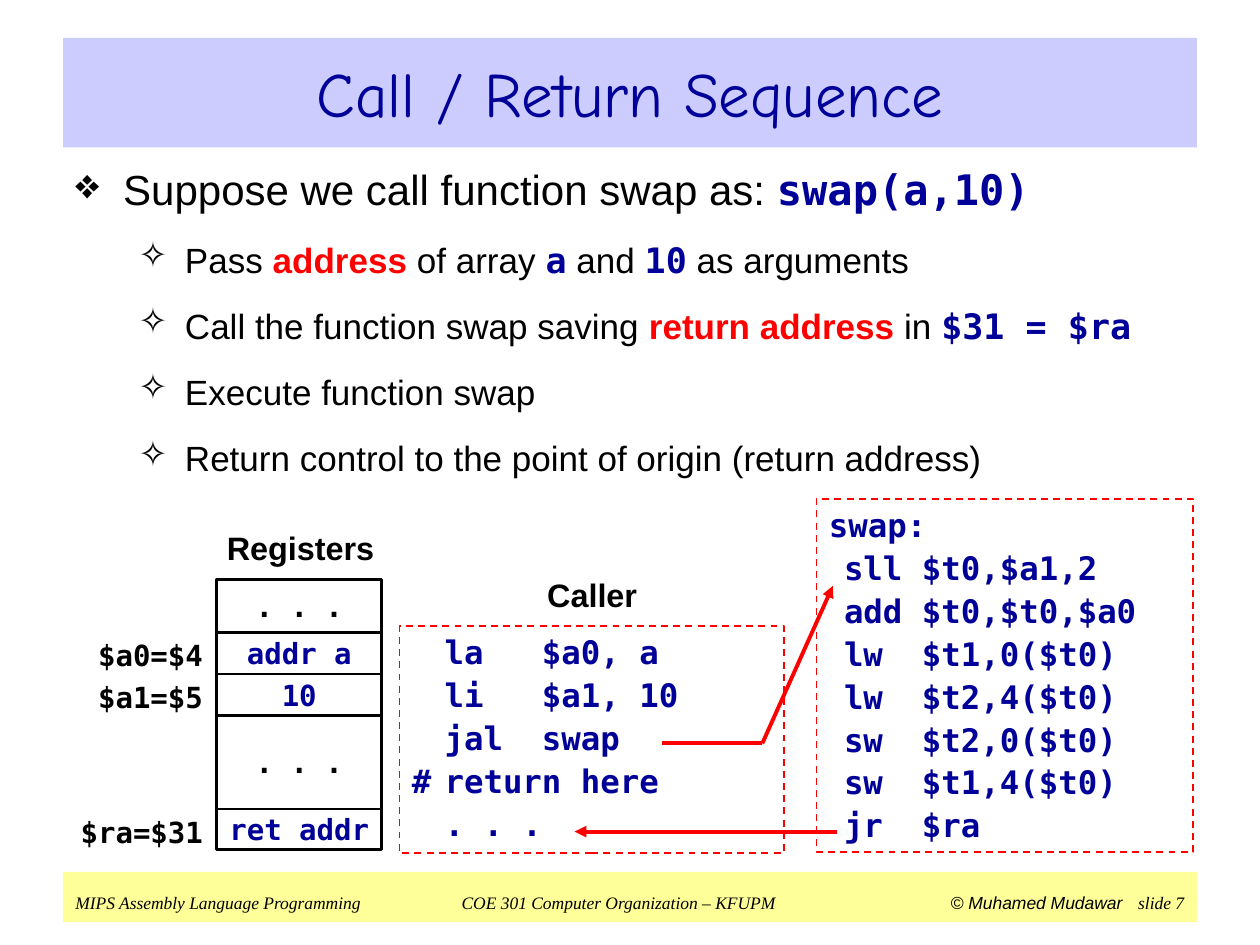
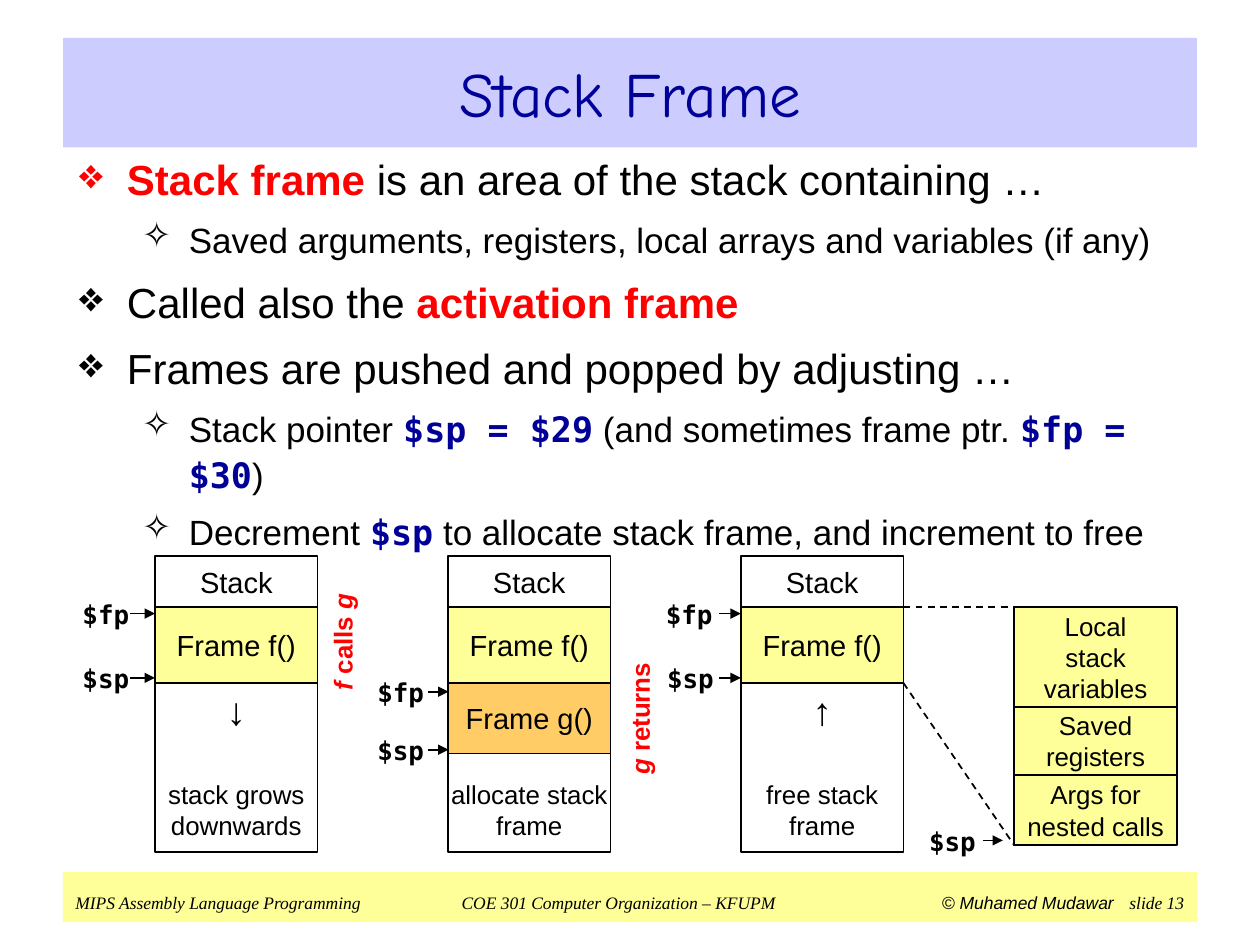
from collections import namedtuple

from lxml.etree import SubElement
from pptx import Presentation
from pptx.dml.color import RGBColor
from pptx.enum.dml import MSO_LINE
from pptx.enum.shapes import MSO_CONNECTOR, MSO_SHAPE
from pptx.enum.text import MSO_ANCHOR, MSO_AUTO_SIZE, PP_ALIGN
from pptx.oxml.ns import qn
from pptx.util import Inches, Pt

BLACK = RGBColor(0x00, 0x00, 0x00)
WHITE = RGBColor(0xFF, 0xFF, 0xFF)
RED = RGBColor(0xFF, 0x00, 0x00)
NAVY = RGBColor(0x00, 0x00, 0x99)
LAVENDER = RGBColor(0xCC, 0xCC, 0xFF)
YELLOW = RGBColor(0xFF, 0xFF, 0x99)
ORANGE = RGBColor(0xFF, 0xCC, 0x66)

SLIDE_WIDTH, SLIDE_HEIGHT = 10, 7.5
MARGIN = 0.05 * SLIDE_WIDTH
BAND_WIDTH = SLIDE_WIDTH - 2 * MARGIN

Style = namedtuple("Style", "font size colour bold italic", defaults=(False, False))
TITLE = Style("Comic Neue", 36, NAVY)
TEXT = Style("Arial", 24, BLACK)
KEY = Style("Arial", 24, RED, True)
CODE = Style("DejaVu Sans Mono", 24, NAVY, True)
FOOTER = Style("Times New Roman", 10, BLACK, italic=True)
HEADING = Style("Arial", 18.5, BLACK, True)
LISTING = CODE._replace(size=18.5)
REGISTER = CODE._replace(size=16.6)
REGISTER_NAME = REGISTER._replace(colour=BLACK)
FRAME = TEXT._replace(size=16.6)
NOTE = TEXT._replace(size=14.8)
ARROW = Style("Arial", 22.1, BLACK, True)
POINTER = Style("DejaVu Sans Mono", 14.8, BLACK, True)
EVENT = KEY._replace(size=14.8)
EVENT_NAME = EVENT._replace(italic=True)


def add_box(slide, place, paragraphs, fill=None, line=None, line_width=1, dash=None,
            align=PP_ALIGN.CENTER, anchor=MSO_ANCHOR.MIDDLE, insets=(0, 0, 0, 0),
            space_before=0, tabs=()):
    """Add a rectangle; each paragraph is a list of (text, Style) runs, each tab (inches, kind)."""
    shape = slide.shapes.add_shape(MSO_SHAPE.RECTANGLE, *map(Inches, place))
    shape.shadow.inherit = False
    if fill is None:
        shape.fill.background()
    else:
        shape.fill.solid()
        shape.fill.fore_color.rgb = fill
    if line is None:
        shape.line.fill.background()
    else:
        shape.line.color.rgb = line
        shape.line.width = Pt(line_width)
        shape.line.dash_style = dash
    frame = shape.text_frame
    frame.word_wrap = True
    frame.vertical_anchor = anchor
    frame.margin_left, frame.margin_top, frame.margin_right, frame.margin_bottom = map(Inches, insets)
    for index, runs in enumerate(paragraphs):
        paragraph = frame.add_paragraph() if index else frame.paragraphs[0]
        paragraph.alignment = align
        paragraph.space_before = Pt(space_before if index else 0)
        for text, style in runs:
            run = paragraph.add_run()
            run.text = text
            run.font.name = style.font
            run.font.size = Pt(style.size)
            run.font.color.rgb = style.colour
            run.font.bold = style.bold
            run.font.italic = style.italic
        if tabs:
            tab_list = SubElement(paragraph._p.get_or_add_pPr(), qn("a:tabLst"))
            for position, kind in tabs:
                SubElement(tab_list, qn("a:tab"), pos=str(Inches(position)), algn=kind)
    return shape


def add_line(slide, start, end, colour=BLACK, width=1, dash=None, arrow=False):
    line = slide.shapes.add_connector(MSO_CONNECTOR.STRAIGHT, *map(Inches, start + end))
    line.line.color.rgb = colour
    line.line.width = Pt(width)
    line.line.dash_style = dash
    if arrow:
        SubElement(line.line._get_or_add_ln(), qn("a:tailEnd"), type="triangle")
    SubElement(line._element.spPr, qn("a:effectLst"))


presentation = Presentation()
presentation.slide_width = Inches(SLIDE_WIDTH)
presentation.slide_height = Inches(SLIDE_HEIGHT)

# Title, number, body place, space before, line spacing, body as (level, runs)
outlines = [
    ("Call / Return Sequence", 7, (0.5, 1.25, 9, 2.65), 13.8, 1, [
        (0, [("Suppose we call function swap as: ", TEXT), ("swap(a,10)", CODE)]),
        (1, [("Pass ", TEXT), ("address", KEY), (" of array ", TEXT), ("a", CODE),
             (" and ", TEXT), ("10", CODE), (" as arguments", TEXT)]),
        (1, [("Call the function swap saving ", TEXT), ("return address", KEY),
             (" in ", TEXT), ("$31 = $ra", CODE)]),
        (1, [("Execute function swap", TEXT)]),
        (1, [("Return control to the point of origin (return address)", TEXT)]),
    ]),
    ("Stack Frame", 13, (0.53, 1.13, 9.07, 3.26), 6, 1.1, [
        (0, [("Stack frame", KEY), (" is an area of the stack containing …", TEXT)]),
        (1, [("Saved arguments, registers, local arrays and variables (if any)", TEXT)]),
        (0, [("Called also the ", TEXT), ("activation frame", KEY)]),
        (0, [("Frames are pushed and popped by adjusting …", TEXT)]),
        (1, [("Stack pointer ", TEXT), ("$sp = $29", CODE),
             (" (and sometimes frame ptr. ", TEXT), ("$fp = $30", CODE), (")", TEXT)]),
        (1, [("Decrement ", TEXT), ("$sp", CODE),
             (" to allocate stack frame, and increment to free", TEXT)]),
    ]),
]
# Bullet, text size, left margin, hanging indent for each level
levels = [("❖", 24, 0.38, -0.38), ("✧", 20, 0.87, -0.37)]

slides = []
for title_text, number, body_place, space_before, line_spacing, body in outlines:
    slide = presentation.slides.add_slide(presentation.slide_layouts[5])
    slides.append(slide)

    title = slide.shapes.title
    title.left, title.top = Inches(MARGIN), Inches(0.3)
    title.width, title.height = Inches(BAND_WIDTH), Inches(0.87)
    title.fill.solid()
    title.fill.fore_color.rgb = LAVENDER
    title.text_frame.text = title_text
    title.text_frame.auto_size = MSO_AUTO_SIZE.NONE
    title.text_frame.vertical_anchor = MSO_ANCHOR.MIDDLE
    paragraph = title.text_frame.paragraphs[0]
    paragraph.alignment = PP_ALIGN.CENTER
    font = paragraph.runs[0].font
    font.name, font.size, font.color.rgb = TITLE.font, Pt(TITLE.size), TITLE.colour

    add_box(slide, (MARGIN, 6.92, BAND_WIDTH, 0.4), [[
        ("MIPS Assembly Language Programming\tCOE 301 Computer Organization – KFUPM\t", FOOTER),
        ("© Muhamed Mudawar", FOOTER._replace(font="Arial")),
        ("  ", FOOTER._replace(size=18, italic=False)),
        (f"slide {number}", FOOTER)]],
        fill=YELLOW, align=PP_ALIGN.LEFT, anchor=MSO_ANCHOR.TOP,
        insets=(0.1, 0.05, 0.1, 0.05), tabs=[(4.31, "ctr"), (8.8, "r")])

    body_box = add_box(slide, body_place, [runs for level, runs in body], align=PP_ALIGN.LEFT,
                       anchor=MSO_ANCHOR.TOP, insets=(0.1, 0.05, 0.1, 0.05))
    for paragraph, (level, runs) in zip(body_box.text_frame.paragraphs, body):
        bullet, size, margin, indent = levels[level]
        paragraph.level = level
        paragraph.space_before = Pt(space_before)
        paragraph.line_spacing = line_spacing
        for run in paragraph.runs:
            run.font.size = Pt(size)
        properties = paragraph._p.get_or_add_pPr()
        properties.set("marL", str(Inches(margin)))
        properties.set("indent", str(Inches(indent)))
        SubElement(properties, qn("a:buChar"), char=bullet)

call_slide, stack_slide = slides

# Call / Return Sequence: code listings
swap_code = ["swap:", "\tsll $t0,$a1,2", "\tadd $t0,$t0,$a0", "\tlw  $t1,0($t0)",
             "\tlw  $t2,4($t0)", "\tsw  $t2,0($t0)", "\tsw  $t1,4($t0)", "\tjr  $ra"]
caller_code = ["\tla   $a0, a", "\tli   $a1, 10", "\tjal  swap", "#\treturn here", "\t. . ."]
for place, code, tab in [((6.48, 3.96, 2.99, 2.8), swap_code, 0.12),
                         ((3.17, 4.97, 3.05, 1.8), caller_code, 0.26)]:
    add_box(call_slide, place, [[(text, LISTING)] for text in code], fill=WHITE, line=RED,
            dash=MSO_LINE.DASH, align=PP_ALIGN.LEFT, anchor=MSO_ANCHOR.TOP,
            insets=(0.1, 0.05, 0.1, 0.05), space_before=2.3, tabs=[(tab, "l")])

for heading, place in [("Caller", (4.15, 4.51, 1.1, 0.41)),
                       ("Registers", (1.66, 4.14, 1.45, 0.41))]:
    add_box(call_slide, place, [[(heading, HEADING)]], fill=WHITE)

# Register file, from top to bottom: name, content, content style, height
registers = [("", ". . .", REGISTER_NAME, 0.42), ("$a0=$4", "addr a", REGISTER, 0.33),
             ("$a1=$5", "10", REGISTER, 0.33), ("", ". . .", REGISTER_NAME, 0.74),
             ("$ra=$31", "ret addr", REGISTER, 0.32)]
top = 4.6
for name, content, style, height in registers:
    add_box(call_slide, (1.72, top, 1.31, height), [[(content, style)]],
            fill=WHITE, line=BLACK, line_width=1.5)
    if name:
        add_box(call_slide, (0.46, top + 0.02, 1.2, 0.32), [[(name, REGISTER_NAME)]],
                align=PP_ALIGN.RIGHT, insets=(0, 0, 0.05, 0))
    top += height

call_bend = (6.05, 5.9)
add_line(call_slide, call_bend, (6.61, 4.65), RED, 2.25, arrow=True)
add_line(call_slide, (5.25, 5.9), call_bend, RED, 2.25)
add_line(call_slide, (6.64, 6.6), (4.56, 6.6), RED, 2.25, arrow=True)

# Stack Frame: three stacks on equal columns
STACK_LEFT, STACK_STEP, STACK_WIDTH = 1.23, 2.325, 1.29
STACK_TOP, FRAME_TOP, FRAME_BOTTOM, STACK_BOTTOM = 4.41, 4.82, 5.42, 6.76
G_BOTTOM = 5.98
stacks = [("↓", "stack grows downwards"), ("", "allocate stack frame"), ("↑", "free stack frame")]
for column, (arrow, note) in enumerate(stacks):
    left = STACK_LEFT + column * STACK_STEP
    parts = [("Stack", STACK_TOP, FRAME_TOP, WHITE), ("Frame f()", FRAME_TOP, FRAME_BOTTOM, YELLOW)]
    free_top = FRAME_BOTTOM
    if not arrow:
        parts.append(("Frame g()", FRAME_BOTTOM, G_BOTTOM, ORANGE))
        free_top = G_BOTTOM
    for text, top, bottom, fill in parts:
        add_box(stack_slide, (left, top, STACK_WIDTH, bottom - top), [[(text, FRAME)]],
                fill=fill, line=BLACK)
    paragraphs = [[(arrow, ARROW)], [(note, NOTE)]] if arrow else [[(note, NOTE)]]
    side = 0.1 if arrow == "↑" else 0
    add_box(stack_slide, (left, free_top, STACK_WIDTH, STACK_BOTTOM - free_top), paragraphs,
            fill=WHITE, line=BLACK, anchor=MSO_ANCHOR.BOTTOM, insets=(side, 0, side, 0.09),
            space_before=26)

# Pointers: name, label centre, arrow start, arrow end, height on the slide
pointers = [("$fp", 0.84, 1.03, 1.23, 4.87), ("$sp", 0.84, 1.03, 1.23, 5.38),
            ("$fp", 3.18, 3.4, 3.56, 5.49), ("$sp", 3.18, 3.4, 3.56, 5.95),
            ("$fp", 5.47, 5.71, 5.88, 4.87), ("$sp", 5.48, 5.71, 5.88, 5.38),
            ("$sp", 7.56, 7.8, 7.96, 6.67)]
for name, centre, start, end, height in pointers:
    add_box(stack_slide, (centre - 0.22, height - 0.17, 0.44, 0.35), [[(name, POINTER)]])
    add_line(stack_slide, (start, height), (end, height), arrow=True)

for place, runs in [
        ((2.16, 4.97, 1.11, 0.25), [("f", EVENT_NAME), (" calls ", EVENT), ("g", EVENT_NAME)]),
        ((4.55, 5.58, 1.05, 0.25), [("g", EVENT_NAME), (" returns", EVENT)])]:
    add_box(stack_slide, place, [runs]).rotation = 270

# Close-up of one frame
DETAIL_LEFT, DETAIL_BOTTOM = 8.05, 6.71
frame_right = STACK_LEFT + 2 * STACK_STEP + STACK_WIDTH
for start, end in [(FRAME_TOP, FRAME_TOP), (FRAME_BOTTOM, DETAIL_BOTTOM)]:
    add_line(stack_slide, (frame_right, start), (DETAIL_LEFT, end), dash=MSO_LINE.DASH)
details = [(["Local", "stack", "variables"], FRAME_TOP, 5.61),
           (["Saved registers"], 5.61, 6.15),
           (["Args for nested calls"], 6.15, DETAIL_BOTTOM)]
for texts, top, bottom in details:
    add_box(stack_slide, (DETAIL_LEFT, top, STACK_WIDTH, bottom - top),
            [[(text, NOTE)] for text in texts], fill=YELLOW, line=BLACK)

presentation.save("out.pptx")
